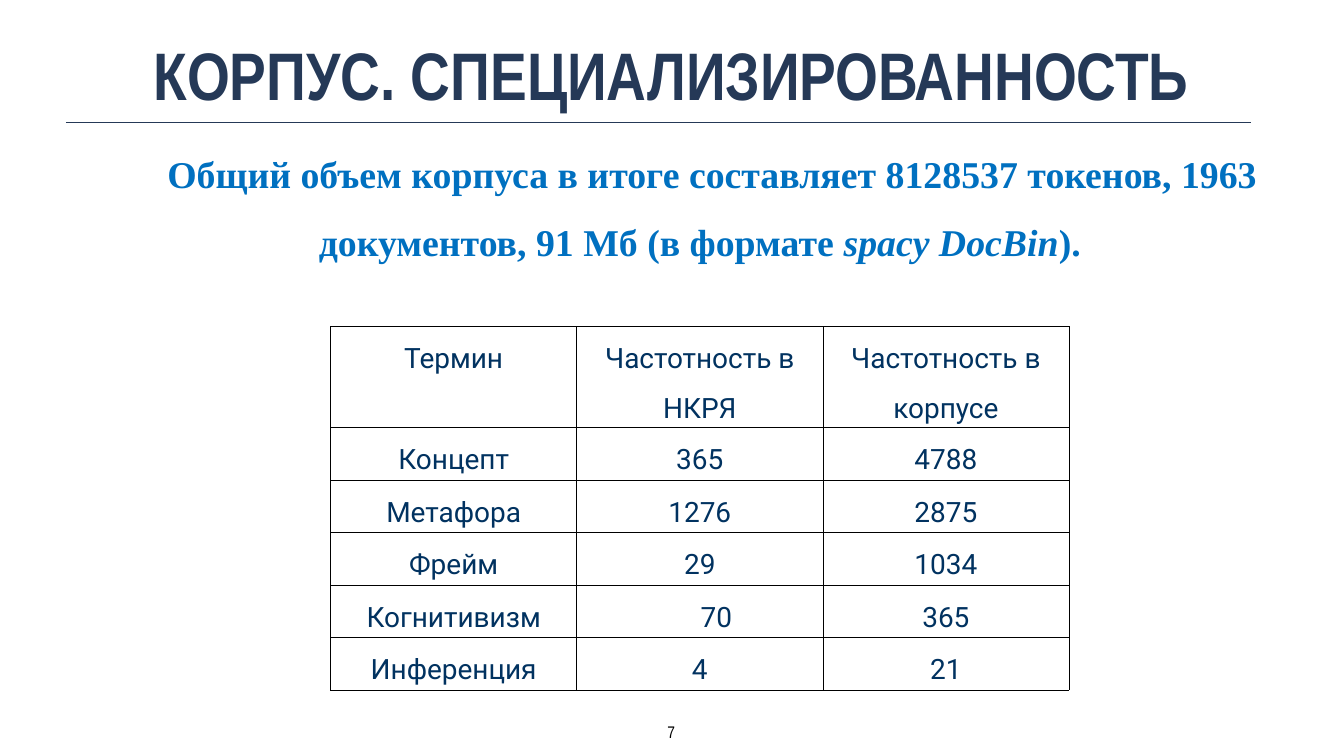
from lxml import etree
from pptx import Presentation
from pptx.dml.color import RGBColor
from pptx.enum.shapes import MSO_CONNECTOR
from pptx.enum.text import MSO_ANCHOR, MSO_AUTO_SIZE, PP_ALIGN
from pptx.oxml import parse_xml
from pptx.oxml.ns import nsdecls, qn
from pptx.util import Pt

# Content
TITLE = "КОРПУС. СПЕЦИАЛИЗИРОВАННОСТЬ"
SUMMARY = [
    ("Общий объем корпуса в итоге составляет 8128537 токенов, 1963 "
     "документов, 91 Мб (в формате ", False),
    ("spacy DocBin", True),
    (").", False),
]
FREQUENCIES = [
    ("Термин", "Частотность в НКРЯ", "Частотность в корпусе"),
    ("Концепт", "365", "4788"),
    ("Метафора", "1276", "2875"),
    ("Фрейм", "29", "1034"),
    ("Когнитивизм", "\t70", "365"),
    ("Инференция", "4", "21"),
]
PAGE = "7"

# Format
COLORS = {"navy": "253957", "blue": "0070C0", "table": "013260", "black": "000000"}
TITLE_FONT = {"name": "Arial Narrow", "size": Pt(96), "bold": True}
SUMMARY_FONT = {"name": "Times New Roman", "size": Pt(54), "bold": True}
CELL_FONT = {"name": "Roboto", "size": Pt(40), "bold": False}
PAGE_FONT = {"name": "Arial Narrow", "size": Pt(24)}
COL_W, ROW_H = 351.6, 75
TABS = [(70, "ctr"), (140, "r")]


def rgb(key):
    return RGBColor.from_string(COLORS[key])


def set_attrs(obj, values):
    for name, value in values.items():
        setattr(obj, name, value)


def add_run(p, text, font, color, **extra):
    r = p.add_run()
    r.text = text
    set_attrs(r.font, {**font, **extra})
    r.font.color.rgb = rgb(color)


def setup_frame(tf, inset_x, inset_y, wrap=True, auto=MSO_AUTO_SIZE.NONE):
    set_attrs(tf, {
        "margin_left": Pt(inset_x), "margin_right": Pt(inset_x),
        "margin_top": Pt(inset_y), "margin_bottom": Pt(inset_y),
        "word_wrap": wrap, "auto_size": auto, "vertical_anchor": MSO_ANCHOR.TOP,
    })
    p = tf.paragraphs[0]
    p.alignment = PP_ALIGN.CENTER
    return p


def add_borders(cell):
    tc_pr = cell._tc.get_or_add_tcPr()
    for i, side in enumerate(("lnL", "lnR", "lnT", "lnB")):
        tc_pr.insert(i, parse_xml(
            f'<a:{side} {nsdecls("a")} w="{Pt(1)}"><a:solidFill>'
            f'<a:srgbClr val="{COLORS["black"]}"/></a:solidFill></a:{side}>'))


def add_tabs(p):
    tabs = etree.SubElement(p._p.get_or_add_pPr(), qn("a:tabLst"))
    for pos, align in TABS:
        etree.SubElement(tabs, qn("a:tab"), pos=str(Pt(pos)), algn=align)


prs = Presentation()
prs.slide_width, prs.slide_height = Pt(1920), Pt(1080)
s = prs.slides.add_slide(prs.slide_layouts[5])

# Title
title = s.shapes.title
set_attrs(title, {"left": Pt(112.3), "top": Pt(41),
                  "width": Pt(1693.4), "height": Pt(104.4)})
add_run(setup_frame(title.text_frame, 6, 6), TITLE, TITLE_FONT, "navy")

# Rule under the title
rule = s.shapes.add_connector(MSO_CONNECTOR.STRAIGHT,
                              Pt(94.3), Pt(174.5), Pt(1787.8), Pt(174.5))
rule.line.color.rgb = rgb("navy")
rule.line.width = Pt(1)
etree.SubElement(rule._element.spPr, qn("a:effectLst"))

# Page number
page = s.shapes.add_textbox(Pt(939.6), Pt(1024.6), Pt(38.9), Pt(40.3))
p = setup_frame(page.text_frame, 6, 6, False, MSO_AUTO_SIZE.SHAPE_TO_FIT_TEXT)
add_run(p, PAGE, PAGE_FONT, "black")

# Corpus summary
summary = s.shapes.add_textbox(Pt(166.3), Pt(180), Pt(1666.8), Pt(191.5))
p = setup_frame(summary.text_frame, 7.2, 3.6, auto=MSO_AUTO_SIZE.SHAPE_TO_FIT_TEXT)
p.line_spacing = 1.5
p._p.get_or_add_pPr().set("indent", str(Pt(35.4)))
for text, italic in SUMMARY:
    add_run(p, text, SUMMARY_FONT, "blue", italic=italic)

# Frequency table
rows, cols = len(FREQUENCIES), len(FREQUENCIES[0])
table = s.shapes.add_table(rows, cols, Pt(472.3), Pt(466.6),
                           Pt(COL_W * cols), Pt(ROW_H * rows)).table
set_attrs(table, {"first_row": False, "horz_banding": False})
for col in table.columns:
    col.width = Pt(COL_W)
for row, texts in zip(table.rows, FREQUENCIES):
    row.height = Pt(ROW_H)
    for cell, text in zip(row.cells, texts):
        set_attrs(cell, {"margin_left": Pt(5), "margin_right": Pt(5),
                         "margin_top": 0, "margin_bottom": 0})
        cell.fill.background()
        add_borders(cell)
        p = cell.text_frame.paragraphs[0]
        set_attrs(p, {"alignment": PP_ALIGN.CENTER, "line_spacing": 1.5})
        if "\t" in text:
            add_tabs(p)
        add_run(p, text, CELL_FONT, "table")

prs.save("out.pptx")
